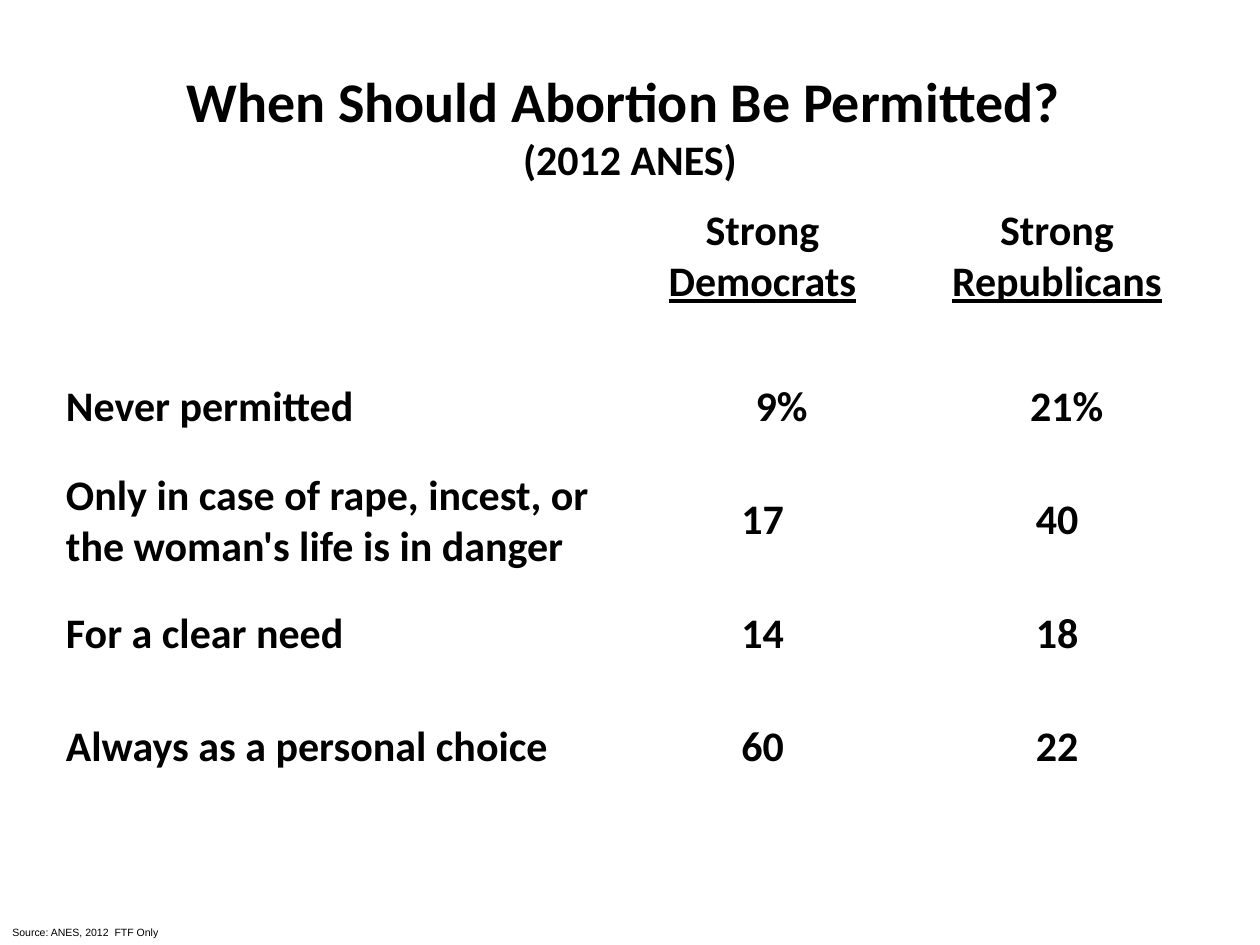
import pptx
import pptx.dml.color
import pptx.enum.text
import pptx.util

PX = 914400 // 126
COLORS = {"text": "000000", "page": "FFFFFF"}
CENTER = pptx.enum.text.PP_ALIGN.CENTER
LEFT = pptx.enum.text.PP_ALIGN.LEFT
MIDDLE = pptx.enum.text.MSO_ANCHOR.MIDDLE
TOP = pptx.enum.text.MSO_ANCHOR.TOP

COLUMN_WIDTHS = [557, 305, 284]
ROW_HEIGHTS = [152, 113, 113, 113, 113]
PARTIES = ["Democrats", "Republicans"]
ANSWERS = [
    ("Never permitted", "9%", "21%"),
    ("Only in case of rape, incest, or the woman's life is in danger", "17", "40"),
    ("For a clear need", "14", "18"),
    ("Always as a personal choice", "60", "22"),
]
CELL_MARGIN = 13
PERCENT_INDENTS = {"9%": 38, "21%": 19}  # lines the digits up with the rows below


def px(n):
    return pptx.util.Emu(n * PX)


def add_run(p, text, size, font="Calibri", bold=True, underline=False):
    r = p.add_run()
    r.text = text
    r.font.size = pptx.util.Pt(size)
    r.font.name = font
    r.font.bold = bold
    r.font.underline = underline
    r.font.color.rgb = pptx.dml.color.RGBColor.from_string(COLORS["text"])


def add_text_frame(s, box, anchor):
    tf = s.shapes.add_textbox(*map(px, box)).text_frame
    tf.word_wrap = True
    tf.vertical_anchor = anchor
    return tf


def add_title(s, box):
    tf = add_text_frame(s, box, MIDDLE)
    lines = [("When Should Abortion Be Permitted? ", 32), ("(2012 ANES)", 24)]
    for i, (text, size) in enumerate(lines):
        p = tf.add_paragraph() if i else tf.paragraphs[0]
        p.alignment = CENTER
        add_run(p, text, size)


def add_answer_table(s, left, top):
    """Place the table of answers by party, sized by its columns and rows."""
    table = s.shapes.add_table(
        len(ROW_HEIGHTS), len(COLUMN_WIDTHS), px(left), px(top),
        px(sum(COLUMN_WIDTHS)), px(sum(ROW_HEIGHTS))).table
    table.first_row = table.horz_banding = False
    for column, width in zip(table.columns, COLUMN_WIDTHS):
        column.width = px(width)
    for row, height in zip(table.rows, ROW_HEIGHTS):
        row.height = px(height)
    for cell in table.iter_cells():
        cell.fill.solid()
        cell.fill.fore_color.rgb = pptx.dml.color.RGBColor.from_string(COLORS["page"])

    for c, party in enumerate(PARTIES, start=1):
        p = table.cell(0, c).text_frame.paragraphs[0]
        p.alignment = CENTER
        add_run(p, "Strong ", 24)
        add_run(p, party, 24, underline=True)

    for r, answer in enumerate(ANSWERS, start=1):
        for c, text in enumerate(answer):
            cell = table.cell(r, c)
            cell.vertical_anchor = MIDDLE
            cell.margin_left = px(CELL_MARGIN + PERCENT_INDENTS.get(text, 0))
            p = cell.text_frame.paragraphs[0]
            p.alignment = CENTER if c else LEFT
            add_run(p, text, 24)


def add_source(s, box):
    tf = add_text_frame(s, box, TOP)
    add_run(tf.paragraphs[0], "Source: ANES, 2012  FTF Only", 6, "Arial", bold=False)


def main():
    prs = pptx.Presentation()
    prs.slide_width, prs.slide_height = px(1260), px(945)
    s = prs.slides.add_slide(prs.slide_layouts[6])
    add_title(s, (0, 60, 1260, 131))
    add_answer_table(s, 53, 199)
    add_source(s, (0, 920, 1239, 25))
    prs.save("out.pptx")


if __name__ == "__main__":
    main()
